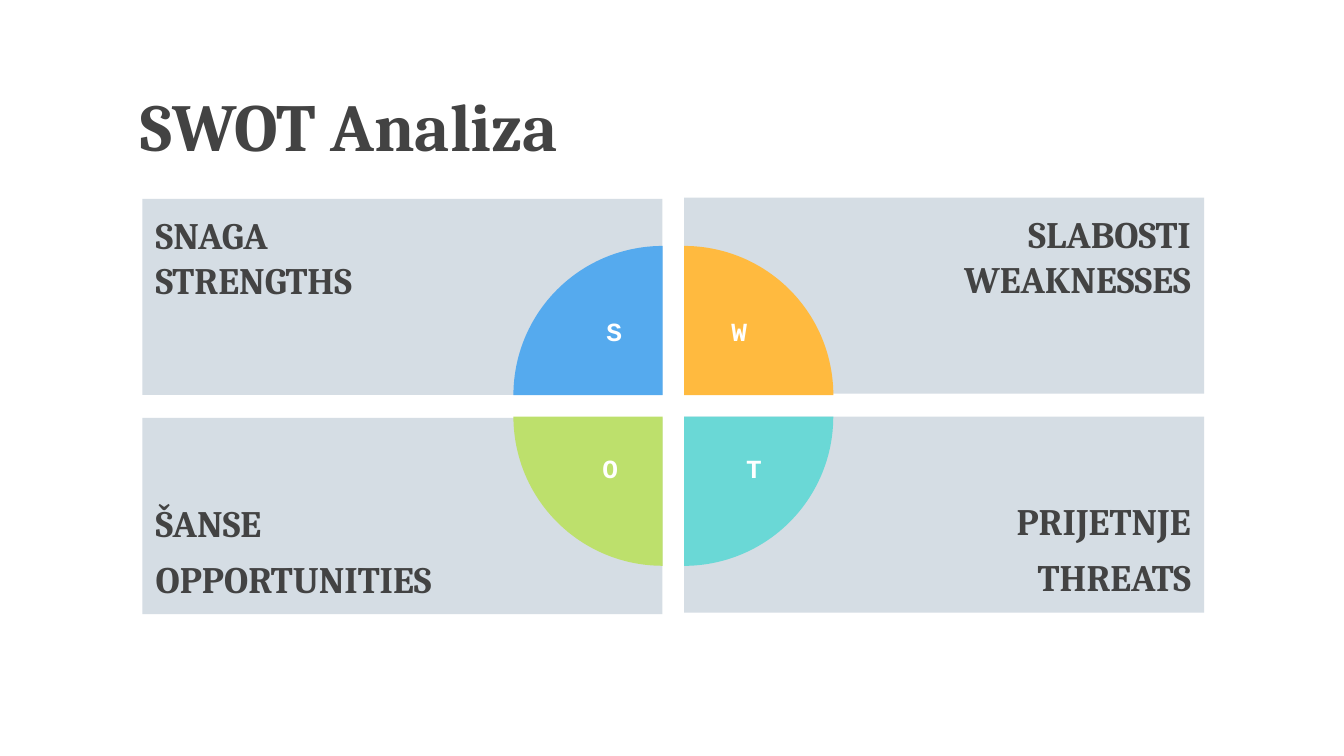
from pptx import Presentation
from pptx.dml.color import RGBColor
from pptx.enum.shapes import MSO_SHAPE as Shape
from pptx.enum.text import MSO_ANCHOR as Anchor, PP_ALIGN as Align
from pptx.util import Inches, Pt

SLIDE_W = 10
SLIDE_H = SLIDE_W * 9 / 16
TITLE = "SWOT Analiza"
INK, PANEL, WHITE = "434343", "D5DDE4", "FFFFFF"
HEADING_FONT, LETTER_FONT = "Cambria", "Courier New"

# column, row, panel top, heading lines, letter, letter centre, colour, rotation
QUADRANTS = [
    (0, 0, 1.48, ("SNAGA", "STRENGTHS"), "S", (4.57, 2.46), "55AAEE", 0),
    (1, 0, 1.47, ("SLABOSTI", "WEAKNESSES"), "W", (5.5, 2.46), "FFBA3F", 90),
    (1, 1, 3.1, ("PRIJETNJE", "THREATS"), "T", (5.61, 3.48), "6AD8D6", 180),
    (0, 1, 3.11, ("ŠANSE", "OPPORTUNITIES"), "O", (4.54, 3.48), "BDE06C", 270),
]

# Grid of panels, and the circle whose quarters are pulled apart
PANEL_LEFT, PANEL_W, PANEL_H, COLUMN_STEP = 1.06, 3.87, 1.46, 4.03
PIE_LEFT, PIE_TOP, PIE_SIZE, PIE_STEP = 3.82, 1.83, 2.22, 0.16
LETTER_W, LETTER_H = 0.28, 0.36
PAD, PIE_PAD = 0.1, 1.5


def color(value):
    return RGBColor.from_string(value)


def box(left, top, width, height):
    return [Inches(v) for v in (left, top, width, height)]


def add_filled(kind, place, fill):
    shape = slide.shapes.add_shape(kind, *box(*place))
    shape.shadow.inherit = False
    shape.fill.solid()
    shape.fill.fore_color.rgb = color(fill)
    shape.line.fill.background()
    return shape


def write(frame, lines, size, font, ink, align, anchor, insets, gap=0):
    frame.word_wrap = True
    frame.vertical_anchor = anchor
    (frame.margin_left, frame.margin_top,
     frame.margin_right, frame.margin_bottom) = [Inches(v) for v in insets]
    for index, line in enumerate(lines):
        paragraph = frame.paragraphs[0] if index == 0 else frame.add_paragraph()
        paragraph.alignment = align
        paragraph.space_before = Pt(gap if index else 0)
        paragraph.space_after = Pt(gap if index == len(lines) - 1 else 0)
        run = paragraph.add_run()
        run.text = line
        run.font.name, run.font.size, run.font.bold = font, Pt(size), True
        run.font.color.rgb = color(ink)


prs = Presentation()
prs.slide_width, prs.slide_height = Inches(SLIDE_W), Inches(SLIDE_H)
slide = prs.slides.add_slide(prs.slide_layouts[6])

# Title
title = slide.shapes.add_textbox(*box(0.95, 0.39, 6.15, 0.94))
write(title.text_frame, [TITLE], 36, HEADING_FONT, INK, Align.LEFT,
      Anchor.BOTTOM, [PAD] * 4)

# Panels with headings, aligned to the outer corners
for column, row, top, heading, *_ in QUADRANTS:
    panel = add_filled(Shape.RECTANGLE, (PANEL_LEFT + column * COLUMN_STEP, top,
                                         PANEL_W, PANEL_H), PANEL)
    insets = (PIE_PAD, PAD, PAD, PAD) if column else (PAD, PAD, PIE_PAD, PAD)
    write(panel.text_frame, heading, 20, HEADING_FONT, INK,
          Align.RIGHT if column else Align.LEFT,
          Anchor.BOTTOM if row else Anchor.TOP, insets, gap=6 * row)

# Quarter circles
for column, row, *_, fill, rotation in QUADRANTS:
    quarter = add_filled(Shape.PIE, (PIE_LEFT + column * PIE_STEP,
                                     PIE_TOP + row * PIE_STEP,
                                     PIE_SIZE, PIE_SIZE), fill)
    quarter.adjustments[0], quarter.adjustments[1] = 108, 162
    quarter.rotation = rotation

# Letters
for *_, letter, (x, y), _fill, _rotation in QUADRANTS:
    label = slide.shapes.add_textbox(*box(x - LETTER_W / 2, y - LETTER_H / 2,
                                          LETTER_W, LETTER_H))
    write(label.text_frame, [letter], 14, LETTER_FONT, WHITE, Align.CENTER,
          Anchor.MIDDLE, [0] * 4)

prs.save("out.pptx")
